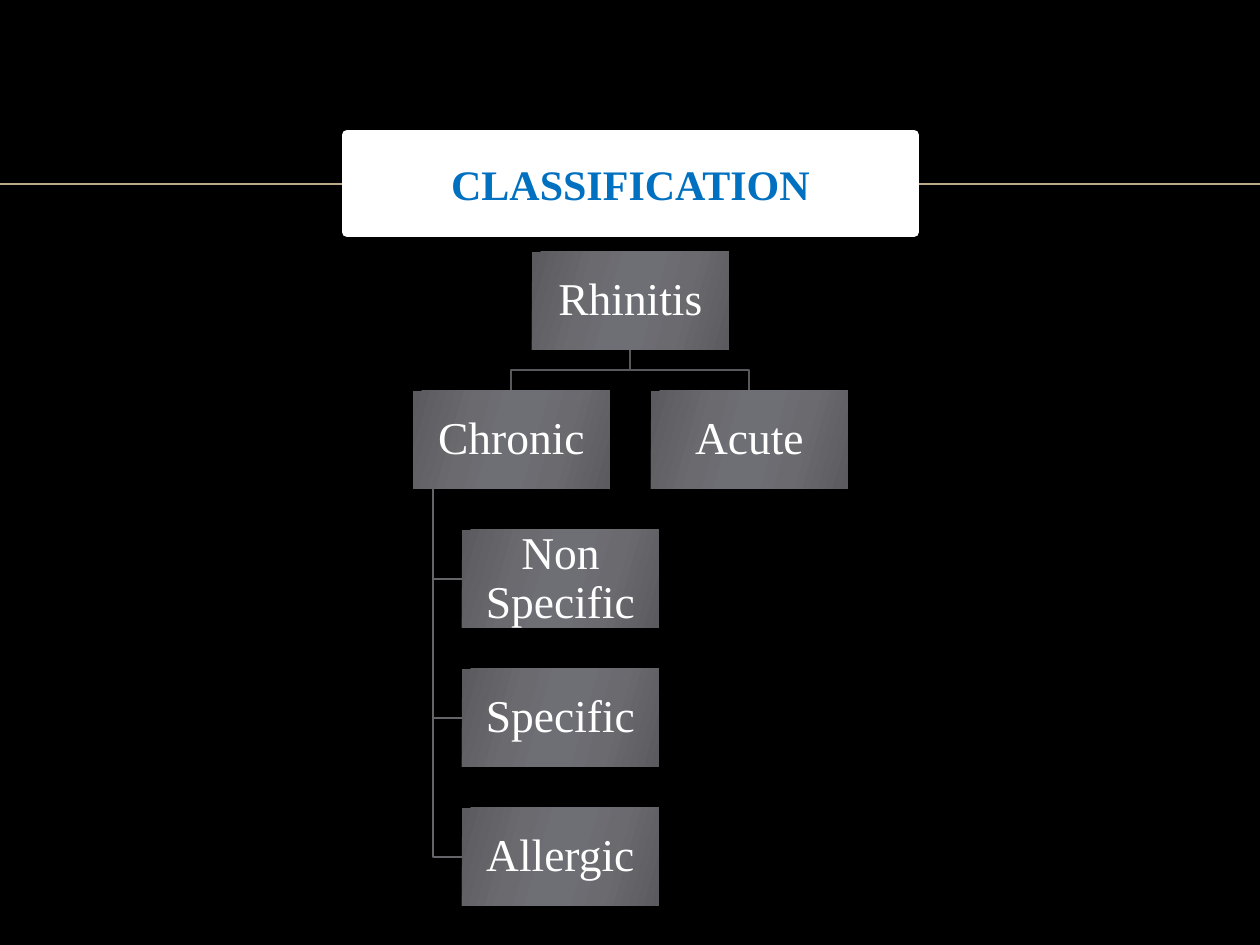
from lxml.etree import SubElement
from pptx import Presentation
from pptx.dml.color import RGBColor
from pptx.enum.shapes import MSO_CONNECTOR, MSO_SHAPE
from pptx.enum.text import MSO_ANCHOR, PP_ALIGN
from pptx.oxml.ns import qn
from pptx.util import Emu, Pt

EMU_PER_PX = 914400 / 126
FONT = "Times New Roman"
COLORS = {
    "background": "000000",
    "rule": "BBAA8A",
    "white": "FFFFFF",
    "title": "0070C0",
    "upper_branch": "59595D",
    "lower_branch": "656569",
    "box_edge": "5B5B5F",
    "box_inner": "6A6A6F",
    "box_center": "6E6E75",
}
BOX_GRADIENT = [
    (0, "box_edge"), (30, "box_inner"), (45, "box_center"),
    (55, "box_center"), (73, "box_inner"), (100, "box_edge"),
]
GRADIENT_ANGLE = 16
BOX_WIDTH, BOX_HEIGHT = 197, 98
TOP, ROW_PITCH = 252, 139
CENTER, COLUMN_OFFSET = 630, 119
CHILD_LEFT, TRUNK = 462, 433


def px(length):
    return Emu(round(length * EMU_PER_PX))


def color(name):
    return RGBColor.from_string(COLORS[name])


def row_top(row):
    return TOP + row * ROW_PITCH


class ChartSlide:
    def __init__(self, slide):
        self.slide = slide
        background = slide.background.fill
        background.solid()
        background.fore_color.rgb = color("background")

    def rule(self, y, right):
        line = self.slide.shapes.add_connector(
            MSO_CONNECTOR.STRAIGHT, px(0), px(y), px(right), px(y))
        line.line.color.rgb = color("rule")
        line.line.width = Pt(1)
        SubElement(line._element.spPr, qn("a:effectLst"))

    def branch(self, points, line_color):
        """Draw an open elbow line through the points."""
        builder = self.slide.shapes.build_freeform(
            *points[0], scale=EMU_PER_PX)
        builder.add_line_segments(points[1:], close=False)
        shape = builder.convert_to_shape()
        shape.shadow.inherit = False
        shape.fill.background()
        shape.line.color.rgb = color(line_color)
        shape.line.width = Pt(1.5)

    def rectangle(self, left, top, width, height):
        shape = self.slide.shapes.add_shape(
            MSO_SHAPE.RECTANGLE, px(left), px(top), px(width), px(height))
        shape.shadow.inherit = False
        return shape

    def label(self, shape, text, size, text_color, bold=False):
        frame = shape.text_frame
        frame.word_wrap = True
        frame.vertical_anchor = MSO_ANCHOR.MIDDLE
        paragraph = frame.paragraphs[0]
        paragraph.alignment = PP_ALIGN.CENTER
        run = paragraph.add_run()
        run.text = text
        run.font.name = FONT
        run.font.size = Pt(size)
        run.font.bold = bold
        run.font.color.rgb = color(text_color)
        return paragraph

    def box(self, text, left, row):
        shape = self.rectangle(left, row_top(row), BOX_WIDTH, BOX_HEIGHT)
        shape.line.fill.background()
        self.shade(shape)
        frame = shape.text_frame
        frame.margin_left = frame.margin_right = px(2)
        frame.margin_top = frame.margin_bottom = px(2)
        self.label(shape, text, 26, "white").line_spacing = 0.9

    def shade(self, shape):
        """Fill the shape with the six-stop gradient."""
        shape.fill.gradient()
        gradient = shape._element.spPr.find(qn("a:gradFill"))
        for child in list(gradient):
            gradient.remove(child)
        stops = SubElement(gradient, qn("a:gsLst"))
        for position, name in BOX_GRADIENT:
            stop = SubElement(stops, qn("a:gs"), pos=str(position * 1000))
            SubElement(stop, qn("a:srgbClr"), val=COLORS[name])
        SubElement(gradient, qn("a:lin"),
                   ang=str(GRADIENT_ANGLE * 60000), scaled="0")

    def title(self, text):
        shape = self.rectangle(347, 135, 567, 97)
        shape.fill.solid()
        shape.fill.fore_color.rgb = color("white")
        shape.line.color.rgb = color("white")
        shape.line.width = Pt(6)
        self.label(shape, text, 24, "title", bold=True).space_before = Pt(4)


def main():
    presentation = Presentation()
    presentation.slide_width = px(1260)
    presentation.slide_height = px(945)
    chart = ChartSlide(
        presentation.slides.add_slide(presentation.slide_layouts[6]))
    chart.rule(184, 1260)

    root_bottom = TOP + BOX_HEIGHT
    middle = (root_bottom + row_top(1)) // 2
    for x in (CENTER + COLUMN_OFFSET, CENTER - COLUMN_OFFSET):
        chart.branch([(CENTER, root_bottom), (CENTER, middle),
                      (x, middle), (x, row_top(1))], "upper_branch")

    children = ["Non Specific", "Specific", "Allergic"]
    for row in range(2, 2 + len(children)):
        y = row_top(row) + BOX_HEIGHT // 2
        chart.branch([(TRUNK, row_top(1) + BOX_HEIGHT), (TRUNK, y),
                      (CHILD_LEFT, y)], "lower_branch")

    root_left = CENTER - BOX_WIDTH // 2
    chart.box("Rhinitis", root_left, 0)
    chart.box("Chronic", root_left - COLUMN_OFFSET, 1)
    chart.box("Acute", root_left + COLUMN_OFFSET, 1)
    for row, text in enumerate(children, start=2):
        chart.box(text, CHILD_LEFT, row)

    chart.title("CLASSIFICATION")
    presentation.save("out.pptx")


if __name__ == "__main__":
    main()
